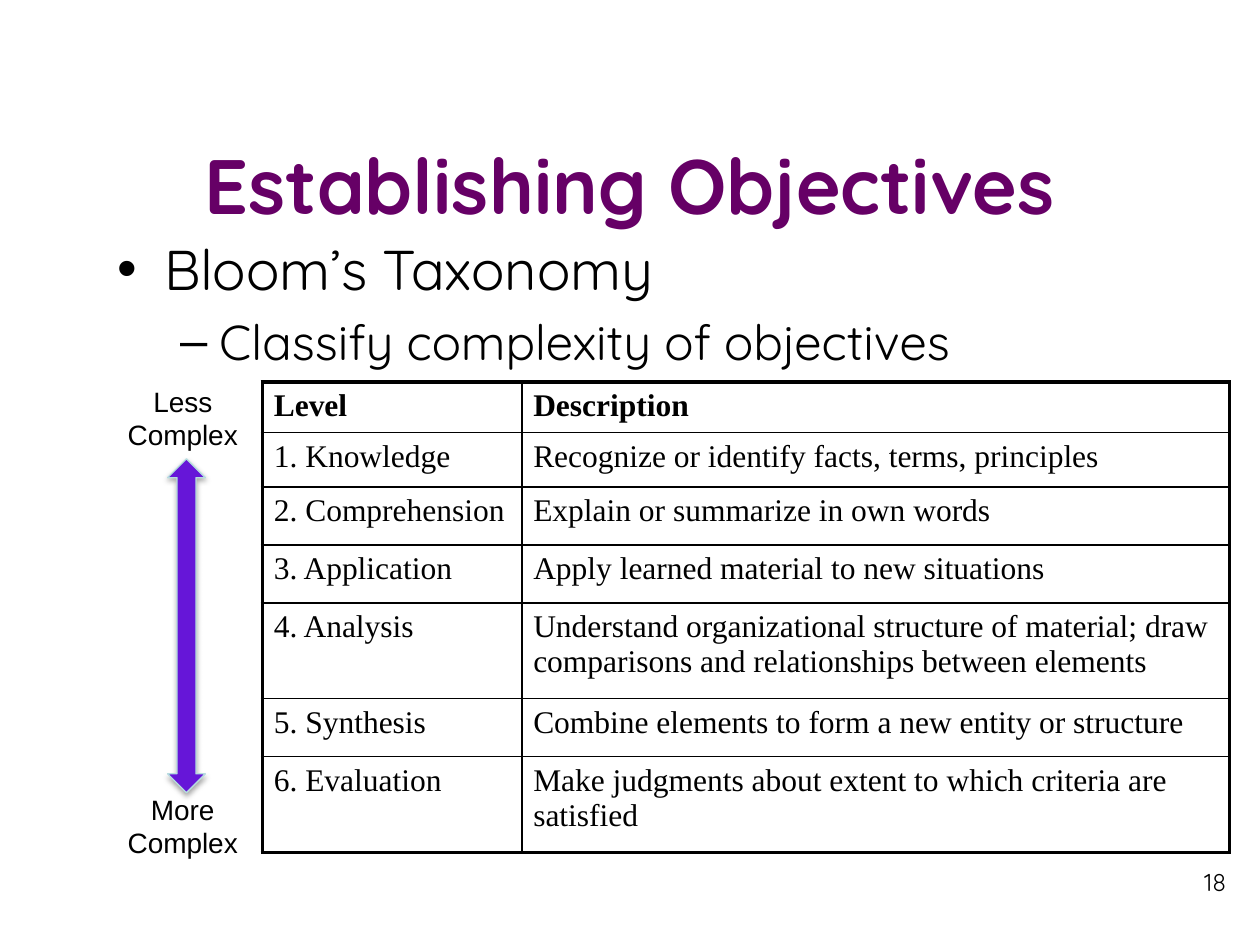
from typing import NamedTuple

from lxml.etree import SubElement
from pptx import Presentation
from pptx.dml.color import RGBColor
from pptx.enum.shapes import MSO_SHAPE as Shape
from pptx.enum.text import MSO_ANCHOR as Anchor, PP_ALIGN as Align
from pptx.oxml.ns import qn
from pptx.util import Cm, Pt

BLACK = RGBColor(0x00, 0x00, 0x00)
PLUM = RGBColor(0x66, 0x00, 0x66)
VIOLET = RGBColor(0x66, 0x16, 0xD8)
PALE_TEAL = RGBColor(0xB6, 0xDC, 0xDF)

HEADING_FONT = "Quicksand"
LABEL_FONT = "Arial"
TABLE_FONT = "Times New Roman"
THIN, THICK = Pt(1), Pt(2.25)


class Box(NamedTuple):
    """Position and size in centimetres."""
    left: float
    top: float
    width: float
    height: float

    def lengths(self) -> list:
        return [Cm(value) for value in self]


class Bullet(NamedTuple):
    char: str
    indent: float
    hanging: float


class Row(NamedTuple):
    level: str
    description: str
    height: float


ROWS = [
    Row("Level", "Description", 1.02),
    Row("1. Knowledge", "Recognize or identify facts, terms, principles", 1.09),
    Row("2. Comprehension", "Explain or summarize in own words", 1.17),
    Row("3. Application", "Apply learned material to new situations", 1.17),
    Row("4. Analysis", "Understand organizational structure of material; draw "
        "comparisons and relationships between elements", 1.93),
    Row("5. Synthesis", "Combine elements to form a new entity or structure", 1.17),
    Row("6. Evaluation", "Make judgments about extent to which criteria are satisfied", 1.93),
]
COLUMN_WIDTHS = [5.23, 14.27]


def write(paragraph, text: str, *, size: float, font: str, color=BLACK, bold=False,
          align=Align.LEFT, before: float = 0, bullet: Bullet | None = None) -> None:
    if bullet:
        properties = paragraph._p.get_or_add_pPr()
        properties.set("marL", str(Cm(bullet.indent)))
        properties.set("indent", str(-Cm(bullet.hanging)))
        SubElement(properties, qn("a:buFont"), typeface=LABEL_FONT)
        SubElement(properties, qn("a:buChar"), char=bullet.char)
    paragraph.alignment = align
    paragraph.space_before = Pt(before)
    run = paragraph.add_run()
    run.text = text
    run.font.size = Pt(size)
    run.font.name = font
    run.font.bold = bold
    run.font.color.rgb = color


def add_frame(slide, box: Box, anchor=Anchor.TOP):
    frame = slide.shapes.add_textbox(*box.lengths()).text_frame
    frame.word_wrap = True
    frame.vertical_anchor = anchor
    return frame


def add_label(slide, box: Box, lines: list[str]) -> None:
    frame = add_frame(slide, box)
    for index, line in enumerate(lines):
        paragraph = frame.add_paragraph() if index else frame.paragraphs[0]
        write(paragraph, line, size=16, font=LABEL_FONT, align=Align.CENTER)


def set_borders(cell, widths: dict[str, int]) -> None:
    properties = cell._tc.get_or_add_tcPr()
    for side, width in widths.items():
        line = SubElement(properties, qn(f"a:ln{side}"), w=str(width))
        fill = SubElement(line, qn("a:solidFill"))
        SubElement(fill, qn("a:srgbClr"), val=str(BLACK))


def add_taxonomy(slide, left: float, top: float) -> None:
    box = Box(left, top, sum(COLUMN_WIDTHS), sum(row.height for row in ROWS))
    taxonomy = slide.shapes.add_table(len(ROWS), len(COLUMN_WIDTHS), *box.lengths()).table
    taxonomy.first_row = taxonomy.horz_banding = False
    for column, width in zip(taxonomy.columns, COLUMN_WIDTHS):
        column.width = Cm(width)

    last_row, last_column = len(ROWS) - 1, len(COLUMN_WIDTHS) - 1
    for r, row in enumerate(ROWS):
        taxonomy.rows[r].height = Cm(row.height)
        for c, text in enumerate((row.level, row.description)):
            cell = taxonomy.cell(r, c)
            cell.margin_left = cell.margin_right = Cm(0.23)
            cell.margin_top = cell.margin_bottom = Cm(0.13)
            write(cell.text_frame.paragraphs[0], text, size=18, font=TABLE_FONT, bold=r == 0)
            # Thick outer frame, thin inner rules
            set_borders(cell, {
                "L": THICK if c == 0 else THIN,
                "R": THICK if c == last_column else THIN,
                "T": THICK if r == 0 else THIN,
                "B": THICK if r == last_row else THIN,
            })
            cell.fill.background()


def add_complexity_arrow(slide, box: Box) -> None:
    arrow = slide.shapes.add_shape(Shape.UP_DOWN_ARROW, *box.lengths())
    arrow.fill.solid()
    arrow.fill.fore_color.rgb = VIOLET
    arrow.line.color.rgb = PALE_TEAL
    arrow.line.width = Pt(0.75)
    # Soft shadow straight below
    arrow.shadow.inherit = False
    effects = arrow._element.spPr.find(qn("a:effectLst"))
    shadow = SubElement(effects, qn("a:outerShdw"), blurRad=str(Pt(3.1)),
                        dist=str(Pt(1.8)), dir="5400000", rotWithShape="0")
    shade = SubElement(shadow, qn("a:srgbClr"), val=str(BLACK))
    SubElement(shade, qn("a:alpha"), val="35000")


def main() -> None:
    deck = Presentation()
    deck.slide_width, deck.slide_height = Cm(25.4), Cm(19.05)
    slide = deck.slides.add_slide(deck.slide_layouts[6])

    # Title
    title = add_frame(slide, Box(1.27, 2.11, 22.86, 3.18), Anchor.MIDDLE)
    write(title.paragraphs[0], "Establishing Objectives", size=44, font=HEADING_FONT,
          color=PLUM, bold=True, align=Align.CENTER)

    # Bullets
    outline = add_frame(slide, Box(2.11, 4.6, 22.86, 3.02))
    write(outline.paragraphs[0], "Bloom’s Taxonomy", size=32, font=HEADING_FONT,
          bullet=Bullet("•", 0.95, 0.95))
    detail = outline.add_paragraph()
    detail.level = 1
    write(detail, "Classify complexity of objectives", size=28, font=HEADING_FONT,
          before=5.6, bullet=Bullet("–", 2.06, 0.79))

    # Taxonomy table
    add_taxonomy(slide, 5.29, 7.7)

    # Complexity scale
    add_label(slide, Box(2.29, 7.62, 2.79, 1.63), ["Less Complex"])
    add_label(slide, Box(2.29, 15.85, 2.79, 1.63), ["More", "Complex"])
    add_complexity_arrow(slide, Box(3.38, 9.25, 0.76, 6.73))

    # Page number
    page_number = add_frame(slide, Box(19.05, 17.35, 5.92, 1.32))
    write(page_number.paragraphs[0], "18", size=14, font=HEADING_FONT, align=Align.RIGHT)

    deck.save("out.pptx")


if __name__ == "__main__":
    main()
